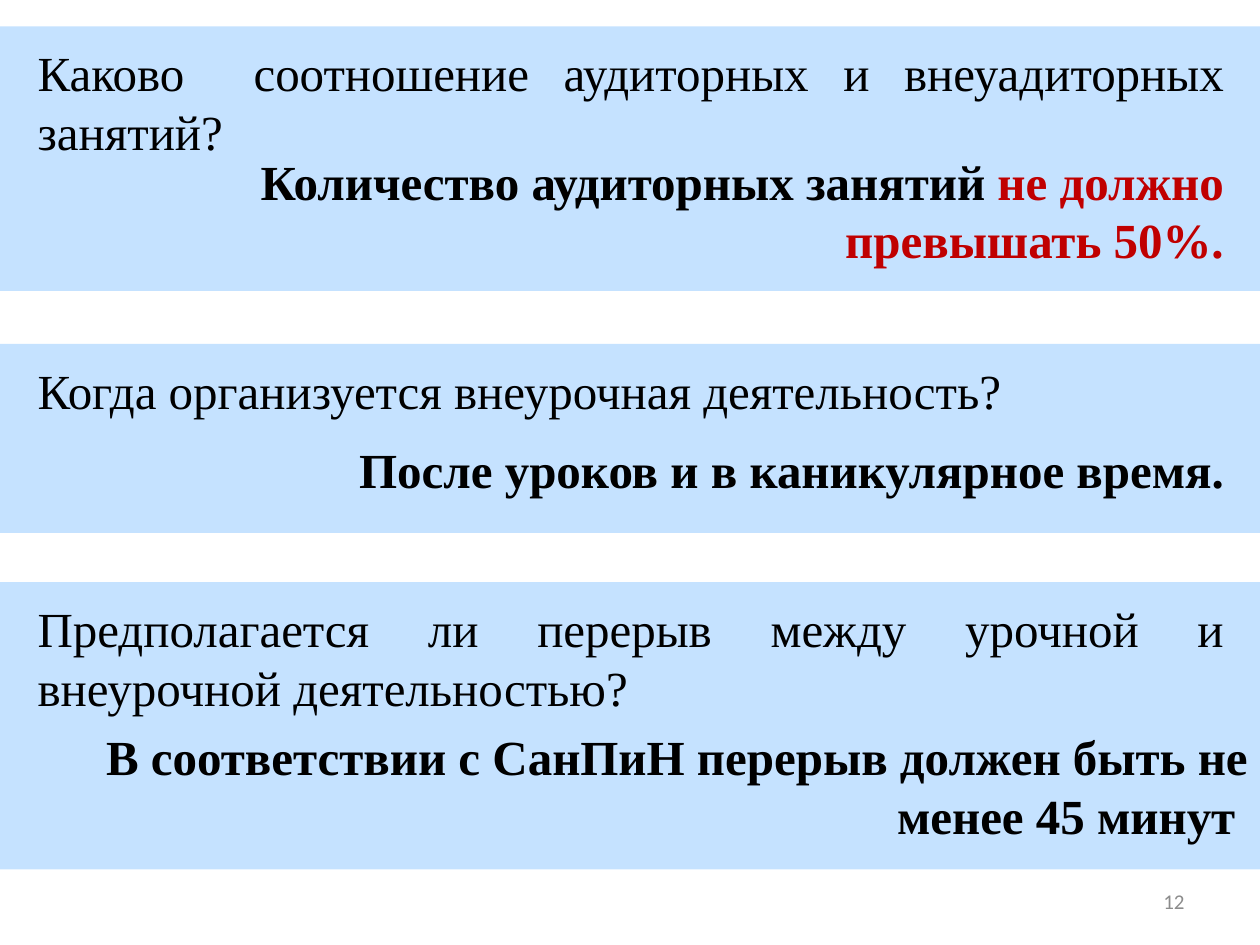
import pptx
import pptx.util
import pptx.dml.color
import pptx.enum.shapes
import pptx.enum.text
import pptx.oxml.ns
import lxml.etree

Inches, Pt = pptx.util.Inches, pptx.util.Pt
ALIGN = pptx.enum.text.PP_ALIGN
BLACK, RED, GREY, BAND = "000000", "C00000", "8C8C8C", "99CCFF"
SERIF = "Times New Roman"
LEFT, WIDTH = 0.2, 9.61
QUESTION_GAP = 0.08  # from the band's top to its question

# Each band: top, height, question, answer top, answer width, answer runs
BANDS = [
    (0.21, 2.1, "Каково  соотношение аудиторных и внеуадиторных занятий? ",
     1.15, WIDTH, [("Количество аудиторных занятий ", BLACK),
                   ("не должно превышать 50%.", RED)]),
    (2.73, 1.5, "Когда организуется внеурочная деятельность? ",
     3.44, WIDTH, [("После уроков и в каникулярное время.", BLACK)]),
    (4.62, 2.28, "Предполагается ли перерыв между урочной и внеурочной деятельностью? ",
     5.72, 9.8, [("В соответствии с СанПиН перерыв должен быть не менее 45 минут ", BLACK)]),
]
PAGE_NUMBER = "12"


def rgb(value):
    return pptx.dml.color.RGBColor.from_string(value)


def add_band(slide, top, height):
    sp = slide.shapes.add_shape(pptx.enum.shapes.MSO_SHAPE.RECTANGLE,
                                0, Inches(top), Inches(10), Inches(height))
    sp.shadow.inherit = False
    sp.line.fill.background()
    sp.fill.solid()
    sp.fill.fore_color.rgb = rgb(BAND)
    # 56 % opacity
    qn = pptx.oxml.ns.qn
    color = sp.fill._xPr.find(qn("a:solidFill")).find(qn("a:srgbClr"))
    lxml.etree.SubElement(color, qn("a:alpha"), val="56000")


def add_text(slide, box, runs, align, size=28, font=SERIF, bold=False):
    sp = slide.shapes.add_textbox(*map(Inches, box))
    tf = sp.text_frame
    tf.word_wrap = True
    p = tf.paragraphs[0]
    p.alignment = align
    p.font.size, p.font.name, p.font.bold = Pt(size), font, bold
    for text, color in runs:
        r = p.add_run()
        r.text = text
        r.font.color.rgb = rgb(color)
    return tf


prs = pptx.Presentation()
prs.slide_width, prs.slide_height = Inches(10), Inches(7.5)
slide = prs.slides.add_slide(prs.slide_layouts[6])

# Bands with question and answer
for top, height, question, answer_top, answer_width, answer in BANDS:
    add_band(slide, top, height)
    text_height = 0.57 if height < 2 else 1.04  # one line or two
    add_text(slide, (LEFT, top + QUESTION_GAP, WIDTH, text_height),
             [(question, BLACK)], ALIGN.JUSTIFY)
    add_text(slide, (LEFT, answer_top, answer_width, text_height),
             answer, ALIGN.RIGHT, bold=True)

# Page number
tf = add_text(slide, (7.17, 6.95, 2.33, 0.4), [(PAGE_NUMBER, GREY)],
              ALIGN.RIGHT, size=12, font="Calibri")
tf.vertical_anchor = pptx.enum.text.MSO_ANCHOR.MIDDLE

prs.save("out.pptx")
